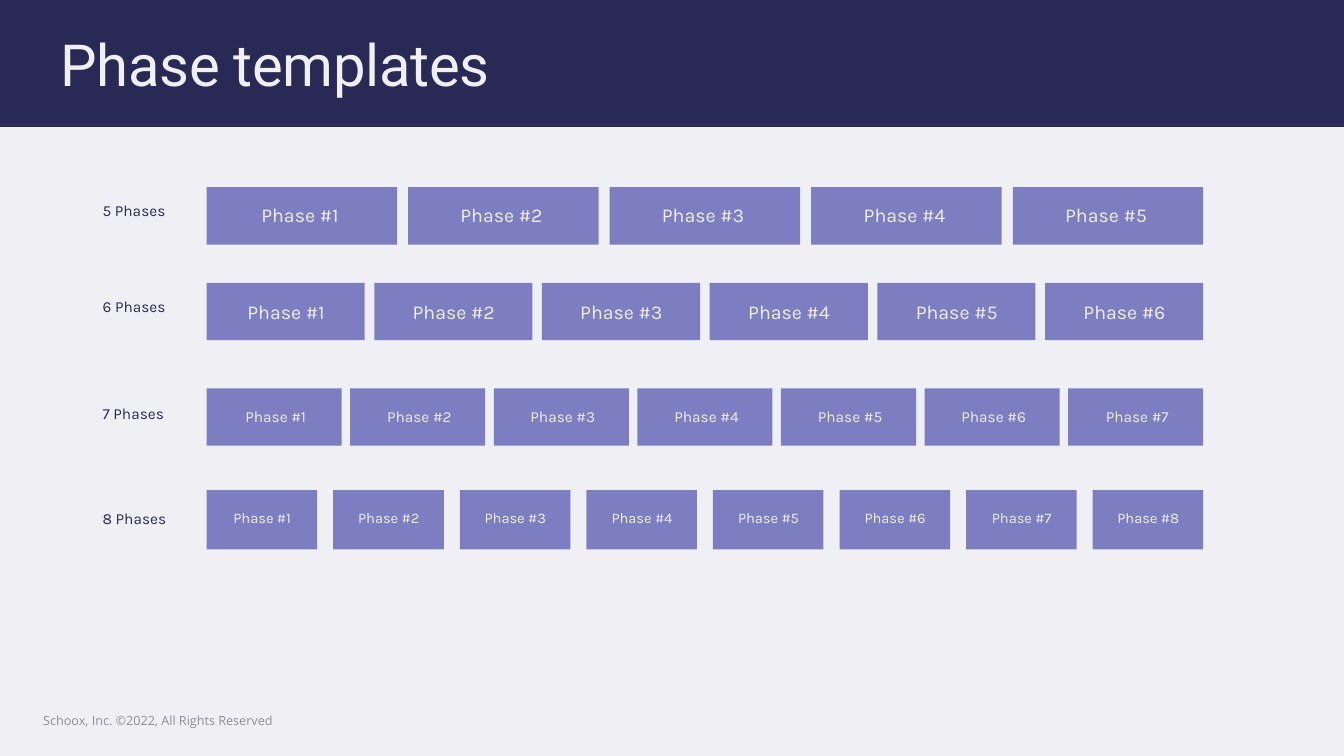
from dataclasses import dataclass
from typing import Any

from pptx import Presentation
from pptx.dml.color import RGBColor
from pptx.enum.shapes import MSO_SHAPE
from pptx.enum.text import MSO_ANCHOR, MSO_AUTO_SIZE, PP_ALIGN
from pptx.slide import Slide
from pptx.util import Pt

NAVY = RGBColor(0x29, 0x29, 0x56)
LAVENDER = RGBColor(0x7D, 0x7D, 0xC1)
MIST = RGBColor(0xF0, 0xF0, 0xF4)
GREY = RGBColor(0x8E, 0x8E, 0x9A)

PAGE_WIDTH, PAGE_HEIGHT = 960, 540
ROW_LEFT, ROW_RIGHT = 147.6, 859.5


@dataclass(frozen=True)
class Area:
    left: float
    top: float
    width: float
    height: float

    def lengths(self) -> tuple[Pt, ...]:
        return tuple(Pt(n) for n in (self.left, self.top, self.width, self.height))


@dataclass(frozen=True)
class PhaseRow:
    count: int
    first_box: Area
    first_label: Area
    label_size: float
    caption_top: float

    @property
    def pitch(self) -> float:
        return (ROW_RIGHT - ROW_LEFT - self.first_box.width) / (self.count - 1)


PHASE_ROWS = [
    PhaseRow(5, Area(ROW_LEFT, 133.7, 136.1, 41), Area(163.2, 141.2, 102.2, 24.5), 14, 140.4),
    PhaseRow(6, Area(ROW_LEFT, 202, 113, 41), Area(161.8, 210.5, 85, 24.5), 14, 208.8),
    PhaseRow(7, Area(ROW_LEFT, 277.4, 96.5, 41), Area(161, 287, 72, 20.9), 11, 285.1),
    PhaseRow(8, Area(ROW_LEFT, 350.2, 79, 42.3), Area(157.8, 360, 59, 20.2), 10.5, 360),
]


def add_block(page: Slide, area: Area, colour: RGBColor) -> None:
    block = page.shapes.add_shape(MSO_SHAPE.RECTANGLE, *area.lengths())
    block.shadow.inherit = False
    block.fill.solid()
    block.fill.fore_color.rgb = colour
    block.line.fill.background()


def add_text(page: Slide, area: Area, text: str, font_format: dict[str, Any],
             colour: RGBColor, frame_format: dict[str, Any],
             align: PP_ALIGN = PP_ALIGN.LEFT, spacing: int = 0) -> None:
    frame = page.shapes.add_textbox(*area.lengths()).text_frame
    for name, value in {"word_wrap": True, **frame_format}.items():
        setattr(frame, name, value)
    para = frame.paragraphs[0]
    para.alignment = align
    span = para.add_run()
    span.text = text
    for name, value in font_format.items():
        setattr(span.font, name, value)
    span.font.color.rgb = colour
    if spacing:
        span._r.get_or_add_rPr().set("spc", str(spacing))


def add_phase_row(page: Slide, row: PhaseRow) -> None:
    growing = {"auto_size": MSO_AUTO_SIZE.SHAPE_TO_FIT_TEXT}
    add_text(page, Area(66.2, row.caption_top, 69.8, 20.9), f"{row.count} Phases",
             {"name": "Karla", "size": Pt(11)}, NAVY, growing)
    box, label = row.first_box, row.first_label
    for index in range(row.count):
        shift = index * row.pitch
        add_block(page, Area(box.left + shift, box.top, box.width, box.height), LAVENDER)
        add_text(page, Area(label.left + shift, label.top, label.width, label.height),
                 f"Phase #{index + 1}", {"name": "Karla", "size": Pt(row.label_size)},
                 MIST, growing, PP_ALIGN.CENTER)


def main() -> None:
    deck = Presentation()
    deck.slide_width, deck.slide_height = Pt(PAGE_WIDTH), Pt(PAGE_HEIGHT)
    page = deck.slides.add_slide(deck.slide_layouts[6])
    page.background.fill.solid()
    page.background.fill.fore_color.rgb = MIST

    # Header band, footer and title
    middle = {"vertical_anchor": MSO_ANCHOR.MIDDLE}
    add_block(page, Area(0, 0, PAGE_WIDTH, 90.7), NAVY)
    add_text(page, Area(23.8, 500.4, 216, 28.8), "Schoox, Inc. ©2022, All Rights Reserved",
             {"name": "Open Sans", "size": Pt(9)}, GREY, middle)
    add_text(page, Area(36, 15.1, 789, 59.8), "Phase templates",
             {"name": "Roboto", "size": Pt(41.4)}, MIST, middle, spacing=-20)

    # One row of phases per template
    for row in PHASE_ROWS:
        add_phase_row(page, row)

    deck.save("out.pptx")


if __name__ == "__main__":
    main()
